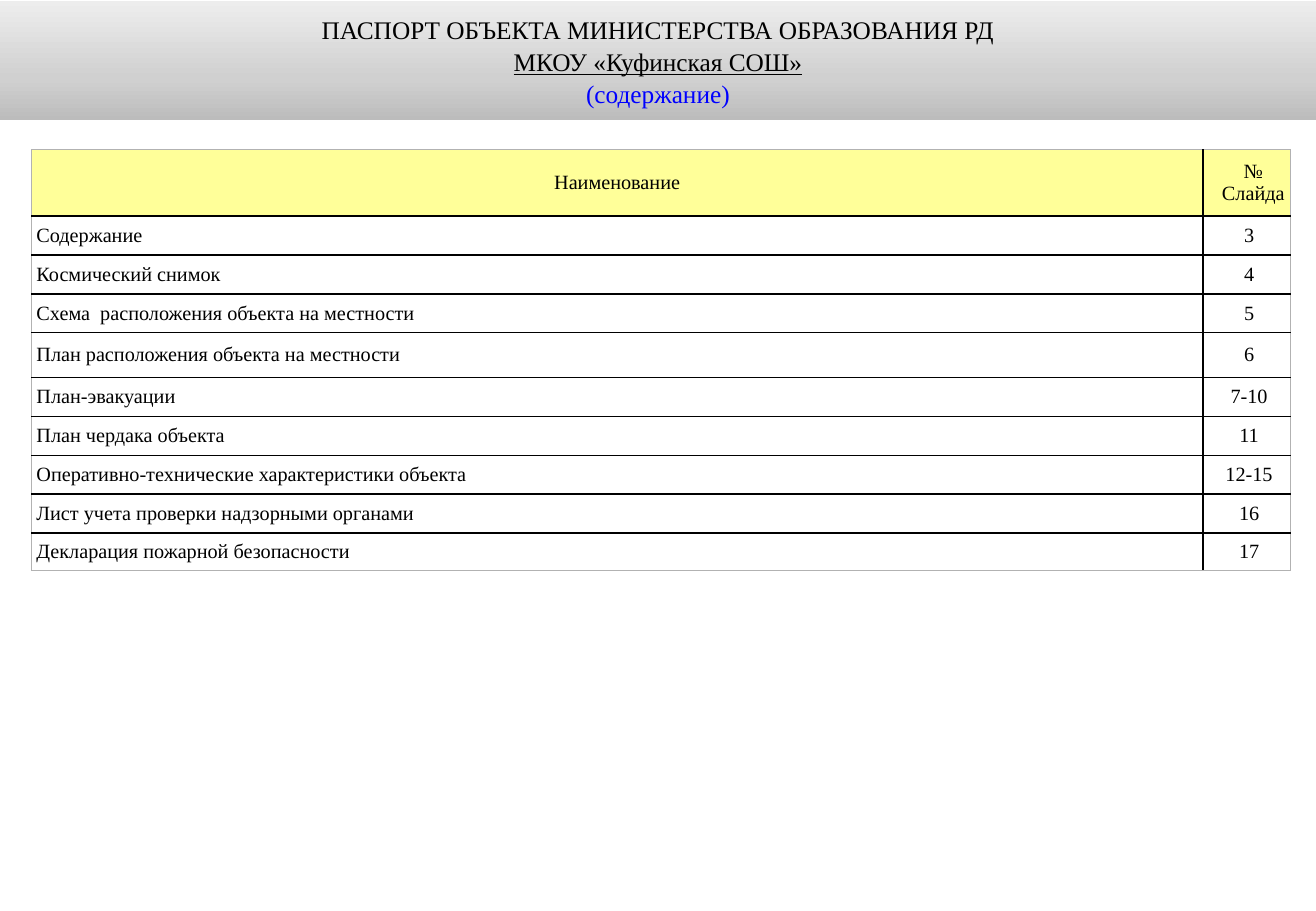
from lxml import etree
from pptx import Presentation
from pptx.dml.color import RGBColor
from pptx.enum.text import MSO_ANCHOR, MSO_AUTO_SIZE, PP_ALIGN
from pptx.oxml.ns import qn
from pptx.util import Inches, Pt

MIDDLE = MSO_ANCHOR.MIDDLE
FIXED = MSO_AUTO_SIZE.NONE
LEFT, CENTER = PP_ALIGN.LEFT, PP_ALIGN.CENTER
TITLE_ONLY = 5
COLORS = {
    "ink": "000000", "blue": "0000FF", "yellow": "FFFF99", "white": "FFFFFF",
    "edge": "B2B2B2", "dark": "BCBCBC", "mid": "D0D0D0", "light": "EDEDED",
}
HEAD = [
    ("ПАСПОРТ ОБЪЕКТА МИНИСТЕРСТВА ОБРАЗОВАНИЯ РД", "ink", False),
    ("МКОУ «Куфинская СОШ»", "ink", True),
    ("(содержание)", "blue", False),
]
SHADES = [(0, "dark"), (35, "mid"), (100, "light")]
ROWS = [
    ("Наименование", "№\nСлайда", 0.55),
    ("Содержание", "3", 0.32),
    ("Космический снимок", "4", 0.32),
    ("Схема  расположения объекта на местности", "5", 0.32),
    ("План расположения объекта на местности", "6", 0.37),
    ("План-эвакуации", "7-10", 0.32),
    ("План чердака объекта", "11", 0.32),
    ("Оперативно-технические характеристики объекта", "12-15", 0.32),
    ("Лист учета проверки надзорными органами", "16", 0.32),
    ("Декларация пожарной безопасности", "17", 0.31),
]
WIDTHS = [9.64, 0.72]


def assign(item, values):
    for name, value in values.items():
        setattr(item, name, value)


def color(name):
    return RGBColor.from_string(COLORS[name])


class Deck:
    font = "Times New Roman"

    def __init__(self, width, height):
        self.file = Presentation()
        assign(self.file, {"slide_width": Inches(width), "slide_height": Inches(height)})
        self.slide = self.file.slides.add_slide(self.file.slide_layouts[TITLE_ONLY])

    def label(self, para, text, size, ink="ink", line=False, align=CENTER, indent=0):
        run = para.add_run()
        run.text = text
        assign(run.font, {"name": self.font, "size": Pt(size), "underline": line})
        run.font.color.rgb = color(ink)
        para.alignment = align
        props = para._p.get_or_add_pPr()
        props.set("marL", str(Inches(indent)))
        props.set("indent", "0")

    def shade(self, shape, stops):
        shape.fill.gradient()
        shape.fill.gradient_angle = 90
        group = shape._element.spPr.find(qn("a:gradFill")).find(qn("a:gsLst"))
        for old in list(group):
            group.remove(old)
        for place, name in stops:
            stop = etree.SubElement(group, qn("a:gs"), pos=str(place * 1000))
            etree.SubElement(stop, qn("a:srgbClr"), val=COLORS[name])

    def title(self, box, lines):
        shape = self.slide.shapes.title
        assign(shape, dict(zip(("left", "top", "width", "height"), map(Inches, box))))
        self.shade(shape, SHADES)
        frame = shape.text_frame
        assign(frame, {
            "auto_size": FIXED, "word_wrap": True, "vertical_anchor": MIDDLE,
            "margin_left": Inches(0.09), "margin_right": Inches(0.09),
            "margin_top": Inches(0.05), "margin_bottom": Inches(0.05),
        })
        for index, (text, ink, line) in enumerate(lines):
            para = frame.add_paragraph() if index else frame.paragraphs[0]
            para.line_spacing = 1.05
            self.label(para, text, 15, ink, line)

    def border(self, cell, outer):
        props = cell._tc.get_or_add_tcPr()
        for index, side in enumerate("LRTB"):
            name, width = ("edge", 0.5) if side in outer else ("ink", 1)
            line = etree.Element(qn("a:ln" + side), w=str(Pt(width)))
            fill = etree.SubElement(line, qn("a:solidFill"))
            etree.SubElement(fill, qn("a:srgbClr"), val=COLORS[name])
            props.insert(index, line)

    def cell(self, cell, text, fill, outer, align, indent):
        assign(cell, {
            "vertical_anchor": MIDDLE, "margin_left": 0, "margin_right": 0,
            "margin_top": 0, "margin_bottom": 0,
        })
        cell.fill.solid()
        cell.fill.fore_color.rgb = color(fill)
        self.border(cell, outer)
        for index, part in enumerate(text.split("\n")):
            frame = cell.text_frame
            para = frame.add_paragraph() if index else frame.paragraphs[0]
            self.label(para, part, 12, align=align, indent=indent)

    def table(self, left, top, widths, rows):
        high = sum(row[-1] for row in rows)
        size = map(Inches, (left, top, sum(widths), high))
        table = self.slide.shapes.add_table(len(rows), len(widths), *size).table
        assign(table, {"first_row": False, "horz_banding": False})
        for column, width in zip(table.columns, widths):
            column.width = Inches(width)
        for r, (name, page, height) in enumerate(rows):
            table.rows[r].height = Inches(height)
            fill = "white" if r else "yellow"
            edge = "T" if r == 0 else "B" if r == len(rows) - 1 else ""
            align, indent = (LEFT, 0.04) if r else (CENTER, 0)
            self.cell(table.cell(r, 0), name, fill, edge + "L", align, indent)
            self.cell(table.cell(r, 1), page, fill, edge + "R", CENTER, 0.04 if r else 0.11)


def main():
    deck = Deck(10.83, 7.5)
    deck.title((0, 0.01, 10.83, 0.98), HEAD)
    deck.table(0.26, 1.23, WIDTHS, ROWS)
    deck.file.save("out.pptx")


if __name__ == "__main__":
    main()
